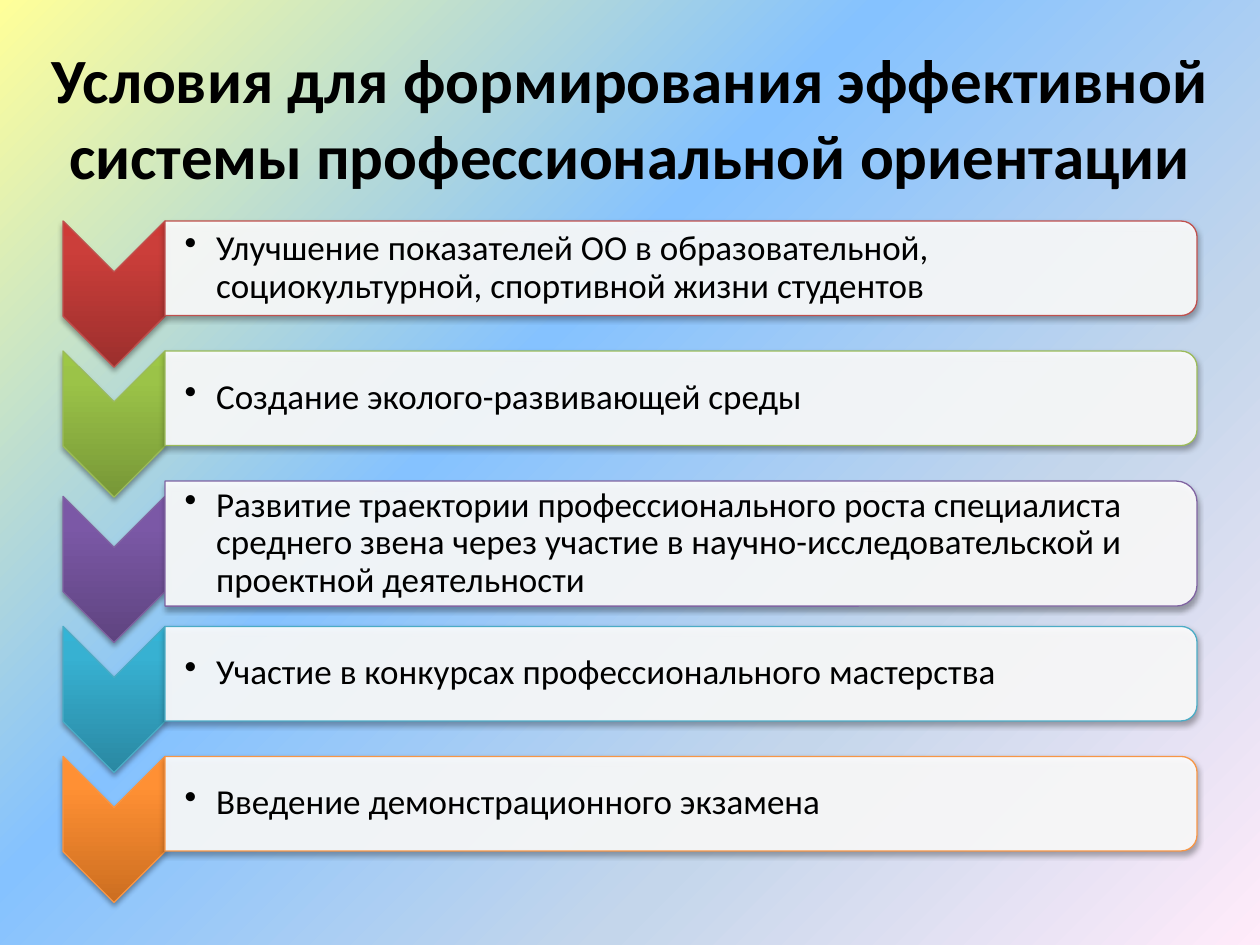
from lxml.etree import SubElement
from pptx import Presentation
from pptx.dml.color import RGBColor
from pptx.enum.shapes import MSO_SHAPE as Preset
from pptx.enum.text import MSO_ANCHOR as Anchor, PP_ALIGN as Align
from pptx.oxml.ns import qn
from pptx.util import Pt

TITLE = "Условия для формирования эффективной системы профессиональной ориентации"
BLACK = RGBColor(0, 0, 0)
WHITE = RGBColor(255, 255, 255)
BACKGROUND = [(0, "FFFF99"), (40, "85C2FF"), (70, "C4D6EB"), (100, "FFEBFA")]
SHORT, TALL = 54, 71.5

# text, bar height, outline, chevron shades at 0, 80 and 100 %
CONDITIONS = [
    ("Улучшение показателей ОО в образовательной, социокультурной, спортивной жизни студентов",
     SHORT, RGBColor(0xC0, 0x50, 0x4D), ("9C2F2D", "CB3E3A", "CE3B37")),
    ("Создание эколого-развивающей среды",
     SHORT, RGBColor(0x9B, 0xBB, 0x59), ("779737", "9BC348", "9DC746")),
    ("Развитие траектории профессионального роста специалиста среднего звена через участие "
     "в научно-исследовательской и проектной деятельности",
     TALL, RGBColor(0x80, 0x64, 0xA2), ("5F4480", "7B58A6", "7C57A8")),
    ("Участие в конкурсах профессионального мастерства",
     SHORT, RGBColor(0x4B, 0xAC, 0xC6), ("2A88A2", "37B1D2", "34B4D6")),
    ("Введение демонстрационного экзамена",
     SHORT, RGBColor(0xF7, 0x96, 0x46), ("CC6E20", "FF9034", "FF9136")),
]

FIRST_TOP, PITCH = 126.3, 74.3
CHEVRON_LEFT, CHEVRON_WIDTH, CHEVRON_HEIGHT = 36, 58.3, 83.5
BAR_LEFT = CHEVRON_LEFT + CHEVRON_WIDTH
BAR_WIDTH = 589.7
CORNER_INSET = 0.049  # share of the bar height kept clear by its round corners


def set_gradient(fill, owner, stops, angle):
    """Give fill the (percent, hex) stops; angle is clockwise and ignores rotation."""
    fill.gradient()
    gradient = owner.find(".//" + qn("a:gradFill"))
    gradient.set("rotWithShape", "0")
    stop_list = gradient.find(qn("a:gsLst"))
    for stop in list(stop_list):
        stop_list.remove(stop)
    for percent, shade in stops:
        stop = SubElement(stop_list, qn("a:gs"), pos=str(percent * 1000))
        SubElement(stop, qn("a:srgbClr"), val=shade)
    line = gradient.find(qn("a:lin"))
    line.set("ang", str(angle * 60000))
    line.set("scaled", "0")


def write(shape, text, size, bold=False, align=Align.LEFT, insets=(7.2, 3.6, 7.2, 3.6)):
    frame = shape.text_frame
    frame.word_wrap = True
    frame.vertical_anchor = Anchor.MIDDLE
    (frame.margin_left, frame.margin_top,
     frame.margin_right, frame.margin_bottom) = map(Pt, insets)
    para = frame.paragraphs[0]
    para.alignment = align
    span = para.add_run()
    span.text = text
    span.font.name = "Calibri"
    span.font.size = Pt(size)
    span.font.bold = bold
    span.font.color.rgb = BLACK
    return para


def add_bullet(para):
    para.line_spacing = 0.9
    para.space_after = Pt(3)
    properties = para._p.get_or_add_pPr()
    properties.set("marL", str(Pt(18)))
    properties.set("indent", str(-Pt(18)))
    SubElement(properties, qn("a:buChar"), char="•")


def add_turned(shapes, preset, left, top, width, height, outline):
    """Add a shape turned by 90 degrees that covers the given visible box."""
    shape = shapes.add_shape(preset, Pt(left + (width - height) / 2),
                             Pt(top + (height - width) / 2), Pt(height), Pt(width))
    shape.rotation = 90
    shape.line.color.rgb = outline
    shape.line.width = Pt(0.75)
    shape.shadow.inherit = False
    effects = shape._element.spPr.find(qn("a:effectLst"))
    shadow = SubElement(effects, qn("a:outerShdw"), blurRad=str(Pt(3.1)),
                        dist=str(Pt(1.8)), dir="5400000", rotWithShape="0")
    color = SubElement(shadow, qn("a:srgbClr"), val="000000")
    SubElement(color, qn("a:alpha"), val="35000")
    return shape


def add_condition(shapes, top, text, height, outline, shades):
    """Add one row and return the top of its chevron."""
    chevron_top = top + (height - SHORT) / 2
    chevron = add_turned(shapes, Preset.CHEVRON, CHEVRON_LEFT, chevron_top,
                         CHEVRON_WIDTH, CHEVRON_HEIGHT, outline)
    set_gradient(chevron.fill, chevron._element, zip((0, 80, 100), shades), 270)

    bar = add_turned(shapes, Preset.ROUND_2_SAME_RECTANGLE, BAR_LEFT, top,
                     BAR_WIDTH, height, outline)
    bar.fill.solid()
    bar.fill.fore_color.rgb = WHITE
    white = bar._element.spPr.find(qn("a:solidFill")).find(qn("a:srgbClr"))
    SubElement(white, qn("a:alpha"), val="90000")

    inset = height * CORNER_INSET
    box = shapes.add_textbox(Pt(BAR_LEFT), Pt(top + inset),
                             Pt(BAR_WIDTH - inset), Pt(height - 2 * inset))
    add_bullet(write(box, text, 20, insets=(11.2, 0.9, 0.9, 0.9)))
    return chevron_top


def main():
    deck = Presentation()
    deck.slide_width, deck.slide_height = Pt(720), Pt(540)
    page = deck.slides.add_slide(deck.slide_layouts[5])
    set_gradient(page.background.fill, page._element, BACKGROUND, 45)

    title = page.shapes.title
    title.left, title.top, title.width, title.height = map(Pt, (0, 21.6, 720, 90))
    write(title, TITLE, 36, bold=True, align=Align.CENTER)

    rows = page.shapes.add_group_shape().shapes
    top = FIRST_TOP
    for condition in CONDITIONS:
        top = add_condition(rows, top, *condition) + PITCH
    deck.save("out.pptx")


if __name__ == "__main__":
    main()
